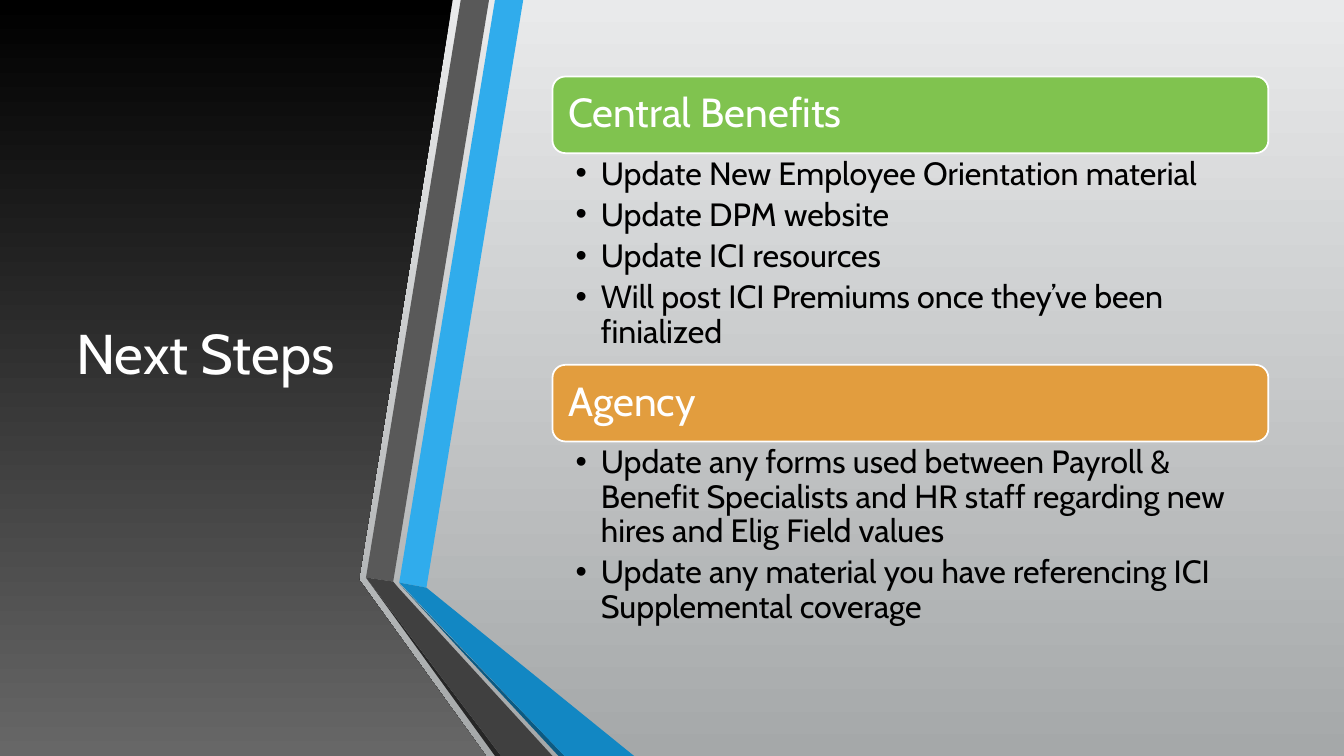
"""Build the Next Steps slide with its angled ribbons and two task lists."""
from lxml.etree import SubElement
from pptx import Presentation
from pptx.dml.color import RGBColor
from pptx.enum.shapes import MSO_SHAPE as SHAPE
from pptx.enum.text import MSO_ANCHOR as ANCHOR, PP_ALIGN as ALIGN
from pptx.oxml.ns import qn
from pptx.util import Inches, Pt

COLORS = {
    "page_top": "E9EAEB", "page_bottom": "A5A8A9",
    "panel_top": "000000", "panel_bottom": "676767",
    "blue": "30ACEC", "blue_fold": "1287C3", "blue_edge": "0C5A82",
    "gray": "595959", "gray_fold": "404040", "gray_edge": "262626",
    "green": "80C34F", "orange": "E29D3E",
    "white": "FFFFFF", "black": "000000",
}
COLORS = {name: RGBColor.from_string(value) for name, value in COLORS.items()}

RIBBONS = [
    ("blue", [(3.96, 5.78), (4.23, 5.83), (5.19, 0), (4.91, 0)]),
    ("gray", [(4.85, 0), (4.57, 0), (3.63, 5.73), (3.9, 5.77)]),
    ("gray_edge", [(3.63, 5.73), (4.91, 7.5), (4.97, 7.5)]),
    ("blue_edge", [(3.96, 5.79), (5.54, 7.5), (5.6, 7.5)]),
    ("blue_fold", [(3.96, 5.78), (5.6, 7.5), (6.29, 7.5), (4.23, 5.83)]),
    ("gray_fold", [(5.48, 7.5), (3.95, 5.83), (3.9, 5.77), (3.63, 5.73), (4.97, 7.5)]),
]
SECTIONS = [
    ("Central Benefits", "green", 0.76, 2.1, [
        "Update New Employee Orientation material",
        "Update DPM website",
        "Update ICI resources",
        "Will post ICI Premiums once they’ve been finialized",
    ]),
    ("Agency", "orange", 3.62, 1.94, [
        "Update any forms used between Payroll & Benefit Specialists and HR staff "
        "regarding new hires and Elig Field values",
        "Update any material you have referencing ICI Supplemental coverage",
    ]),
]
LEFT, WIDTH, BAR_HEIGHT = 5.48, 7.1, 0.76

deck = Presentation()
deck.slide_width, deck.slide_height = Inches(13.33), Inches(7.5)
page = deck.slides.add_slide(deck.slide_layouts[6])


def add_outline(points):
    corners = [(Inches(x), Inches(y)) for x, y in points]
    builder = page.shapes.build_freeform(*corners[0])
    builder.add_line_segments(corners[1:], close=True)
    outline = builder.convert_to_shape()
    outline.shadow.inherit = False
    outline.line.fill.background()
    return outline


def style_paragraph(para, size, color):
    font = para.runs[0].font
    font.name, font.size = "Cabin", Pt(size)
    font.color.rgb = COLORS[color]
    para.line_spacing = 0.9


panel = add_outline([(0, 0), (4.49, 0), (3.56, 5.75), (4.82, 7.5), (0, 7.5)])
for fill, name in ((page.background.fill, "page"), (panel.fill, "panel")):
    fill.gradient()
    fill.gradient_angle = 270
    for stop, end in zip(fill.gradient_stops, ("top", "bottom")):
        stop.color.rgb = COLORS[f"{name}_{end}"]

title = page.shapes.add_textbox(Inches(0.59), Inches(0.75), Inches(2.89), Inches(5.58))
title.text_frame.word_wrap = True
title.text_frame.vertical_anchor = ANCHOR.MIDDLE
title.text_frame.text = "Next Steps"
heading = title.text_frame.paragraphs[0]
heading.alignment = ALIGN.CENTER
style_paragraph(heading, 40, "white")

for color, points in RIBBONS:
    ribbon = add_outline(points)
    ribbon.fill.solid()
    ribbon.fill.fore_color.rgb = COLORS[color]

for label, color, top, list_height, tasks in SECTIONS:
    bar = page.shapes.add_shape(
        SHAPE.ROUNDED_RECTANGLE, Inches(LEFT), Inches(top), Inches(WIDTH), Inches(BAR_HEIGHT))
    bar.shadow.inherit = False
    bar.fill.solid()
    bar.fill.fore_color.rgb = COLORS[color]
    bar.line.color.rgb = COLORS["white"]
    bar.line.width = Pt(1.25)
    frame = bar.text_frame
    frame.margin_left = frame.margin_right = Inches(0.12)
    frame.vertical_anchor = ANCHOR.MIDDLE
    frame.text = label
    frame.paragraphs[0].alignment = ALIGN.LEFT
    style_paragraph(frame.paragraphs[0], 29, "white")

    box = page.shapes.add_textbox(
        Inches(LEFT), Inches(top + BAR_HEIGHT), Inches(WIDTH), Inches(list_height))
    frame = box.text_frame
    frame.word_wrap = True
    frame.margin_left = frame.margin_right = Inches(0.23)
    frame.margin_top = frame.margin_bottom = Inches(0.04)
    frame.text = "\n".join(tasks)
    for para in frame.paragraphs:
        style_paragraph(para, 23, "black")
        para.space_after = Pt(4.5)
        properties = para._p.get_or_add_pPr()
        properties.set("marL", str(Inches(0.25)))
        properties.set("indent", str(Inches(-0.25)))
        SubElement(properties, qn("a:buFont")).set("typeface", "Arial")
        SubElement(properties, qn("a:buChar")).set("char", "•")

deck.save("out.pptx")
